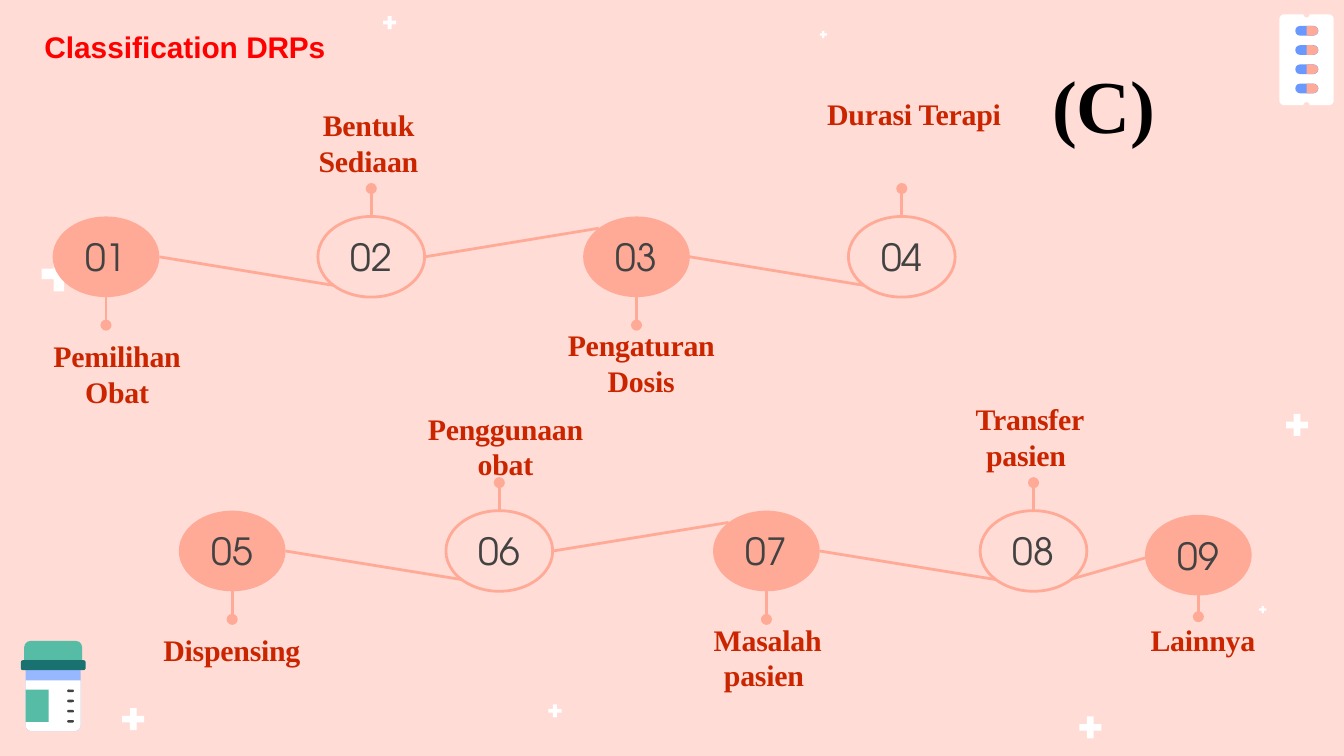
import math

import pptx
import pptx.dml.color
import pptx.enum.shapes
import pptx.enum.text
import pptx.oxml
import pptx.oxml.ns
import pptx.util

Pt = pptx.util.Pt
MSO = pptx.enum.shapes.MSO_SHAPE
ALIGN = pptx.enum.text.PP_ALIGN
ANCHOR = pptx.enum.text.MSO_ANCHOR
PEACH, WHITE, TEAL, DARK = "FFAA97", "FFFFFF", "56BCA5", "424242"


def rgb(value):
    return pptx.dml.color.RGBColor.from_string(value)


def add_shape(kind, x, y, w, h, fill, adj=()):
    sp = s.shapes.add_shape(kind, Pt(x), Pt(y), Pt(w), Pt(h))
    sp.shadow.inherit = False
    for i, value in enumerate(adj):
        sp.adjustments[i] = value
    if fill:
        sp.fill.solid()
        sp.fill.fore_color.rgb = rgb(fill)
        sp.line.fill.background()
    else:
        sp.fill.background()
        sp.line.color.rgb = rgb(PEACH)
        sp.line.width = Pt(1.5)
    return sp


prs = pptx.Presentation()
prs.slide_width, prs.slide_height = Pt(720), Pt(405)
s = prs.slides.add_slide(prs.slide_layouts[5])
s.background.fill.solid()
s.background.fill.fore_color.rgb = rgb("FFDCD6")

title = s.shapes.title
title.left, title.top, title.width, title.height = Pt(16.6), Pt(11.5), Pt(247.7), Pt(26.6)
tf = title.text_frame
tf.vertical_anchor = ANCHOR.TOP
tf.auto_size = pptx.enum.text.MSO_AUTO_SIZE.NONE
p = tf.paragraphs[0]
p.alignment = ALIGN.LEFT
for text, spacing in [("Classification ", "0"), ("DRPs", "-10")]:
    r = p.add_run()
    r.text = text
    r.font.name, r.font.size, r.font.bold = "Arial", Pt(16), True
    r.font.color.rgb = rgb("FF0000")
    r.font._element.set("spc", spacing)

crosses = [
    (578.2, 383.8, 11.8), (33.8, 344.9, 7), (205.2, 8.6, 7),
    (439.2, 16.6, 3.8), (293.8, 377.3, 7), (674.6, 324.7, 3.8),
    (22.3, 137.5, 18.6), (65.5, 379.4, 11.8), (689, 221.8, 11.8),
]
for x, y, size in crosses:
    add_shape(MSO.CROSS, x, y, size, size, WHITE, [0.35])

node_w, node_h = 57.2, 43.2
rows = [(1, 4, 28.2, 116, 142.1, 0), (5, 4, 95.8, 273.6, 143.1, 0), (9, 1, 613.4, 275.8, 0, -3.6)]
lines = [(573.8, 310.3, 616.3, 298.1, False)]
for first, count, left, y, pitch, stem_shift in rows:
    for i in range(count):
        x = left + i * pitch
        filled = i % 2 == 0
        sp = add_shape(MSO.OVAL, x, y, node_w, node_h, PEACH if filled else None)
        tf = sp.text_frame
        tf.vertical_anchor = ANCHOR.MIDDLE
        tf.margin_left = tf.margin_right = tf.margin_top = tf.margin_bottom = Pt(7.2)
        p = tf.paragraphs[0]
        p.alignment = ALIGN.CENTER
        r = p.add_run()
        r.text = f"{first + i:02d}"
        r.font.name, r.font.size = "TeX Gyre Adventor", Pt(20)
        r.font.color.rgb = rgb(DARK)

        mid = x + node_w / 2
        start, end = (node_h, node_h + 15) if filled else (0, -15)
        lines.append((mid, y + start + stem_shift, mid, y + end + stem_shift, True))
        if i < count - 1:
            target_y = y + node_h * (0.854 if filled else 0.146)
            lines.append((x + node_w, y + node_h / 2, x + pitch + 0.146 * node_w, target_y, False))

for x1, y1, x2, y2, dot in lines:
    c = s.shapes.add_connector(pptx.enum.shapes.MSO_CONNECTOR.STRAIGHT, Pt(x1), Pt(y1), Pt(x2), Pt(y2))
    c.line.color.rgb = rgb(PEACH)
    c.line.width = Pt(1.5)
    if dot:
        pptx.oxml.ns.qn("a:tailEnd")
        ln = c.line._get_or_add_ln()
        ln.append(ln.makeelement(pptx.oxml.ns.qn("a:tailEnd"), {"type": "oval"}))
    sp_pr = c._element.spPr
    sp_pr.append(sp_pr.makeelement(pptx.oxml.ns.qn("a:effectLst"), {}))

labels = [
    ("Pemilihan Obat", 11.5, 180, 101.5, 39.6),
    ("Bentuk Sediaan", 146.2, 56.2, 101.5, 39.6),
    ("Pengaturan Dosis", 292.3, 174.2, 101.5, 39.6),
    ("Durasi Terapi", 438.5, 50.4, 101.5, 39.6),
    ("Dispensing", 67.7, 337.7, 112.3, 20.2),
    ("Penggunaan obat", 219.6, 218.9, 101.5, 39.6),
    ("Masalah pasien ", 360, 331.9, 101.5, 39.6),
    ("Transfer pasien ", 500.4, 213.8, 101.5, 39.6),
    ("Lainnya", 601.9, 331.9, 84.2, 20.2),
]
for text, x, y, w, h in labels:
    tf = s.shapes.add_textbox(Pt(x), Pt(y), Pt(w), Pt(h)).text_frame
    tf.word_wrap = True
    tf.margin_left = tf.margin_right = tf.margin_bottom = 0
    tf.margin_top = Pt(0.9)
    p = tf.paragraphs[0]
    p.alignment = ALIGN.CENTER
    p.space_before = Pt(1)
    p._p.get_or_add_pPr().set("marL", str(Pt(0.9)))
    r = p.add_run()
    r.text = text
    r.font.name, r.font.size, r.font.bold = "Times New Roman", Pt(16), True
    r.font.color.rgb = rgb("CB2500")
    r.font._element.set("spc", "-10")

tf = s.shapes.add_textbox(Pt(556.6), Pt(22.3), Pt(84.2), Pt(73.4)).text_frame
tf.word_wrap = True
p = tf.paragraphs[0]
p.line_spacing = 1.12
r = p.add_run()
r.text = "(C)"
r.font.name, r.font.size, r.font.bold = "Times New Roman", Pt(40), True
r.font.color.rgb = rgb("000000")

bottle = [
    (MSO.ROUND_2_SAME_RECTANGLE, 13.7, 357.1, 29.5, 34.6, "97B8FF", [0, 0.11]),
    (MSO.ROUND_2_SAME_RECTANGLE, 13, 343.4, 31, 11.7, TEAL, [0.28, 0]),
    (MSO.ROUNDED_RECTANGLE, 11.2, 353.7, 34.7, 5.3, "197270", [0.2]),
    (MSO.ROUND_2_SAME_RECTANGLE, 13.7, 364.5, 29.5, 27.2, WHITE, [0, 0.12]),
    (MSO.RECTANGLE, 13.7, 369.5, 12.4, 17.2, TEAL, []),
]
for part in bottle:
    add_shape(*part)
for i in range(4):
    add_shape(MSO.ROUNDED_RECTANGLE, 36, 369.4 + 5.45 * i, 3.6, 1.4, DARK, [0.5])

left, right, top, bottom, radius = 685.4, 714.5, 7.7, 56.4, 2.7
middle = (left + right) / 2
arcs = [
    (left + radius, top + radius, radius, 180, 270),
    (middle, top, 1.7, 180, 0),
    (right - radius, top + radius, radius, 270, 360),
    (right - radius, bottom - radius, radius, 0, 90),
    (middle, bottom, 1.7, 0, -180),
    (left + radius, bottom - radius, radius, 90, 180),
]
points = []
for cx, cy, size, begin, end in arcs:
    for step in range(9):
        angle = math.radians(begin + (end - begin) * step / 8)
        points.append((Pt(cx + size * math.cos(angle)), Pt(cy + size * math.sin(angle))))
fb = s.shapes.build_freeform(*points[0], scale=1.0)
fb.add_line_segments(points[1:], close=True)
sp = fb.convert_to_shape()
sp.shadow.inherit = False
sp.fill.solid()
sp.fill.fore_color.rgb = rgb(WHITE)
sp.line.fill.background()
for i in range(4):
    y = 13.9 + 10.3 * i
    add_shape(MSO.ROUNDED_RECTANGLE, 693.9, y, 12.4, 5.2, "6998FF", [0.5])
    add_shape(MSO.FLOWCHART_DELAY, middle, y, 6.3, 5.2, PEACH)

prs.save("out.pptx")
